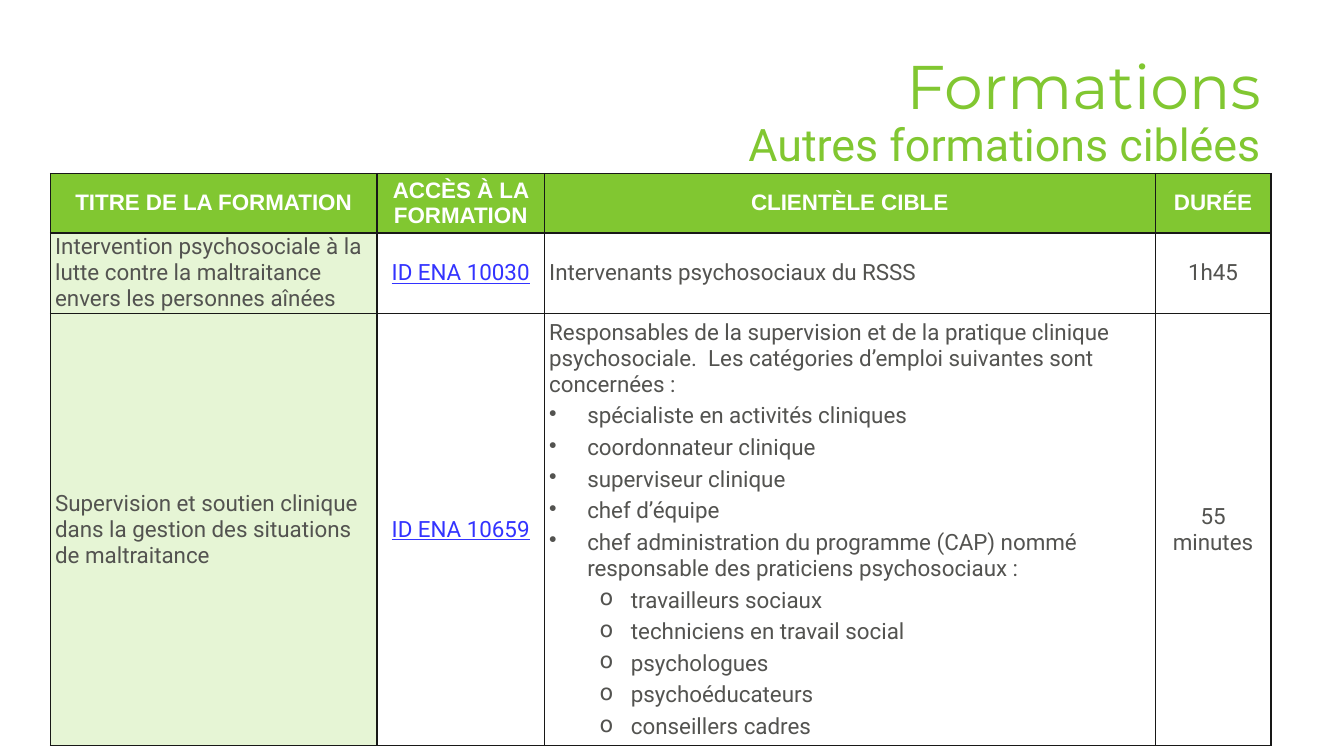
"""Build the slide listing the other targeted training courses."""
from lxml.etree import SubElement
from pptx import Presentation
from pptx.dml.color import RGBColor
from pptx.enum.text import MSO_ANCHOR, PP_ALIGN
from pptx.oxml import parse_xml
from pptx.oxml.ns import qn
from pptx.util import Cm, Pt

GREEN = RGBColor(0x81, 0xC7, 0x31)
PALE_GREEN = RGBColor(0xE6, 0xF5, 0xD5)
WHITE = RGBColor(0xFF, 0xFF, 0xFF)
GREY = RGBColor(0x53, 0x53, 0x50)
LINK_BLUE = RGBColor(0x33, 0x33, 0xFF)
BORDER = RGBColor(0x18, 0x18, 0x17)
NS = "http://schemas.openxmlformats.org/drawingml/2006/main"

TITLE = [("Formations", "Montserrat", 44), ("Autres formations ciblées", "Roboto", 32)]
HEADERS = ["TITRE DE LA FORMATION", "ACCÈS À LA FORMATION", "CLIENTÈLE CIBLE", "DURÉE"]
JOBS = [
    "spécialiste en activités cliniques",
    "coordonnateur clinique",
    "superviseur clinique",
    "chef d’équipe",
    "chef administration du programme (CAP) nommé responsable des praticiens psychosociaux :",
]
PRACTITIONERS = [
    "travailleurs sociaux",
    "techniciens en travail social",
    "psychologues",
    "psychoéducateurs",
    "conseillers cadres",
]
SUPERVISORS = (
    "Responsables de la supervision et de la pratique clinique psychosociale.  "
    "Les catégories d’emploi suivantes sont concernées :"
)
COURSES = [
    [
        "Intervention psychosociale à la lutte contre la maltraitance envers les personnes aînées",
        "ID ENA 10030",
        "Intervenants psychosociaux du RSSS",
        "1h45",
    ],
    [
        "Supervision et soutien clinique dans la gestion des situations de maltraitance",
        "ID ENA 10659",
        "\n".join([SUPERVISORS, *JOBS, *PRACTITIONERS]),
        "55 minutes",
    ],
]
BULLETS = {
    **{job: ("•", 0, Cm(0.96), Cm(-0.96)) for job in JOBS},
    **{name: ("o", 1, Cm(2.06), Cm(-0.79)) for name in PRACTITIONERS},
}
COL_WIDTHS = [Cm(8.23), Cm(4.22), Cm(15.39), Cm(2.92)]
ROW_HEIGHTS = [Cm(1.5), Cm(1.97), Cm(10.58)]
COURSE_COL, ACCESS_COL, AUDIENCE_COL = range(3)


def add_title(s):
    tf = s.shapes.add_textbox(Cm(3.86), Cm(1.02), Cm(28.17), Cm(3.68)).text_frame
    tf.word_wrap = True
    tf.vertical_anchor = MSO_ANCHOR.MIDDLE
    p = tf.paragraphs[0]
    p.alignment = PP_ALIGN.RIGHT
    p.line_spacing = 0.9
    for i, (text, font, size) in enumerate(TITLE):
        if i:
            p.add_line_break()
        r = p.add_run()
        r.text = text
        r.font.name, r.font.size = font, Pt(size)
        r.font.color.rgb = GREEN


def set_borders(cell):
    tcPr = cell._tc.get_or_add_tcPr()
    for i, side in enumerate(("lnL", "lnR", "lnT", "lnB")):
        tcPr.insert(i, parse_xml(
            f'<a:{side} xmlns:a="{NS}" w="{Pt(1)}"><a:solidFill>'
            f'<a:srgbClr val="{BORDER}"/></a:solidFill></a:{side}>'))


def set_bullet(p, char, level, margin, indent):
    p.level = level
    pPr = p._p.get_or_add_pPr()
    pPr.set("marL", str(margin))
    pPr.set("indent", str(indent))
    SubElement(pPr, qn("a:buChar")).set("char", char)


def fill_cell(cell, text, row, col):
    header, link = row == 0, row > 0 and col == ACCESS_COL
    left = not header and col in (COURSE_COL, AUDIENCE_COL)
    cell.fill.solid()
    cell.fill.fore_color.rgb = GREEN if header else PALE_GREEN if col == COURSE_COL else WHITE
    set_borders(cell)
    cell.margin_left = cell.margin_right = Cm(0.12)
    cell.margin_top = cell.margin_bottom = 0
    cell.vertical_anchor = MSO_ANCHOR.MIDDLE
    cell.text_frame.text = text
    for p in cell.text_frame.paragraphs:
        p.alignment = PP_ALIGN.LEFT if left else PP_ALIGN.CENTER
        p.space_after = Pt(4)
        if p.text in BULLETS:
            set_bullet(p, *BULLETS[p.text])
        for r in p.runs:
            r.font.name = "Arial" if header else "Roboto"
            r.font.size = Pt(16)
            r.font.bold = header
            r.font.underline = link
            r.font.color.rgb = WHITE if header else LINK_BLUE if link else GREY


def add_courses(s):
    rows = [HEADERS, *COURSES]
    table = s.shapes.add_table(len(rows), len(HEADERS), Cm(1.27), Cm(4.37),
                               sum(COL_WIDTHS), sum(ROW_HEIGHTS)).table
    table.first_row = table.horz_banding = False
    for column, width in zip(table.columns, COL_WIDTHS):
        column.width = width
    for i, (texts, height) in enumerate(zip(rows, ROW_HEIGHTS)):
        table.rows[i].height = height
        for j, text in enumerate(texts):
            fill_cell(table.cell(i, j), text, i, j)


def main():
    prs = Presentation()
    prs.slide_width, prs.slide_height = Cm(33.87), Cm(19.05)
    s = prs.slides.add_slide(prs.slide_layouts[6])
    add_title(s)
    add_courses(s)
    prs.save("out.pptx")


if __name__ == "__main__":
    main()
